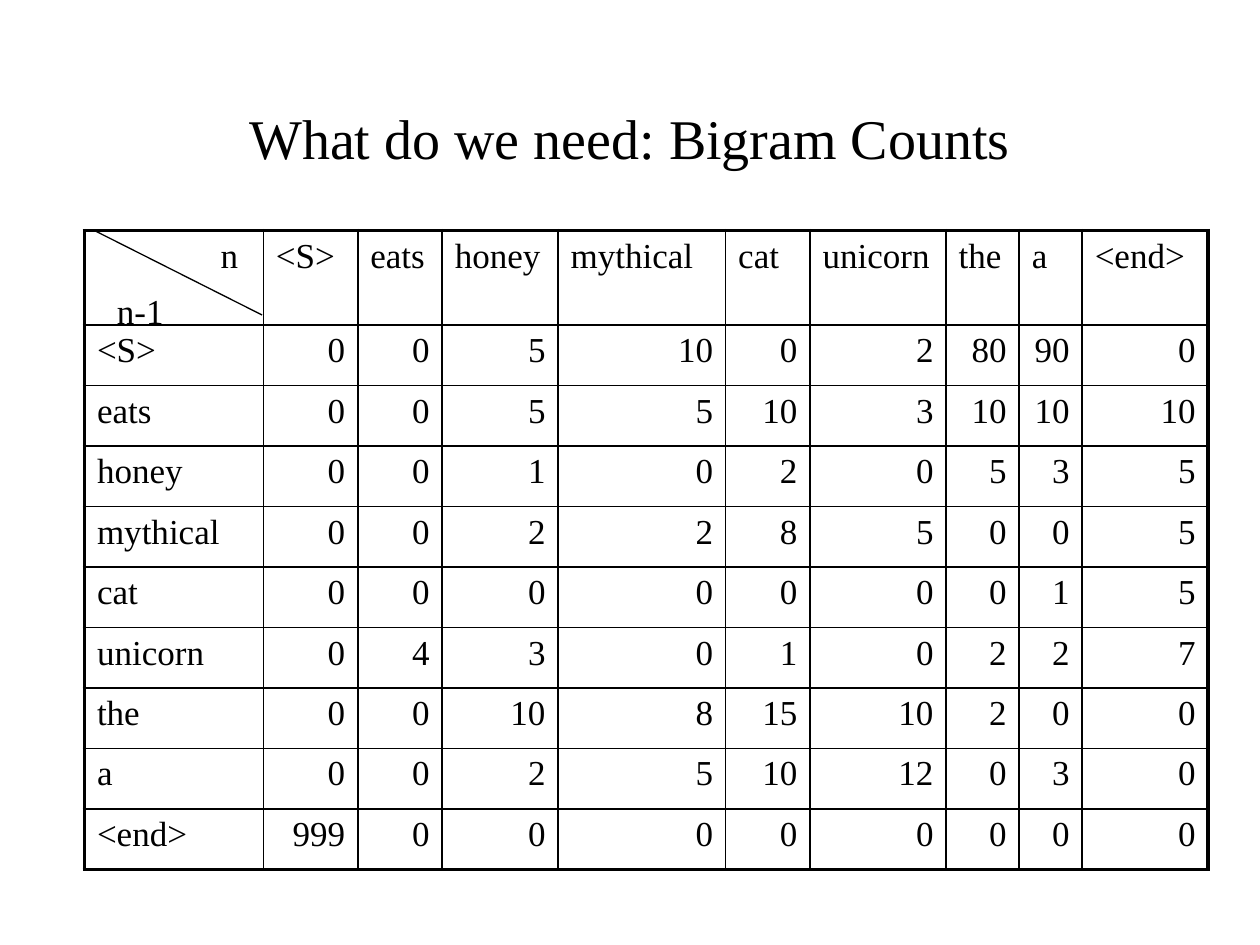
from dataclasses import dataclass

from lxml import etree
from pptx import Presentation
from pptx.dml.color import RGBColor
from pptx.enum.shapes import MSO_CONNECTOR
from pptx.enum.text import MSO_ANCHOR, MSO_AUTO_SIZE, PP_ALIGN
from pptx.oxml.ns import qn
from pptx.util import Inches, Pt

LEFT, CENTER, RIGHT = PP_ALIGN.LEFT, PP_ALIGN.CENTER, PP_ALIGN.RIGHT
TOP, MIDDLE = MSO_ANCHOR.TOP, MSO_ANCHOR.MIDDLE
GROW = MSO_AUTO_SIZE.SHAPE_TO_FIT_TEXT
STRAIGHT = MSO_CONNECTOR.STRAIGHT

WORDS = ["<S>", "eats", "honey", "mythical", "cat", "unicorn", "the", "a", "<end>"]
COUNTS = [
    [0, 0, 5, 10, 0, 2, 80, 90, 0],
    [0, 0, 5, 5, 10, 3, 10, 10, 10],
    [0, 0, 1, 0, 2, 0, 5, 3, 5],
    [0, 0, 2, 2, 8, 5, 0, 0, 5],
    [0, 0, 0, 0, 0, 0, 0, 1, 5],
    [0, 4, 3, 0, 1, 0, 2, 2, 7],
    [0, 0, 10, 8, 15, 10, 2, 0, 0],
    [0, 0, 2, 5, 10, 12, 0, 3, 0],
    [999, 0, 0, 0, 0, 0, 0, 0, 0],
]
WIDTHS = [1.42, 0.75, 0.67, 0.92, 1.33, 0.67, 1.08, 0.58, 0.5, 1]
HEAD, ROW = 0.75, 0.48


@dataclass
class Theme:
    font: str = "Times New Roman"
    ink: str = "000000"
    title: float = 32
    body: float = 20
    outer: float = 2.25
    inner: float = 1
    thin: float = 0.75


def write(frame, text, *, theme, size, align=LEFT):
    para = frame.paragraphs[0]
    para.alignment = align
    run = para.add_run()
    run.text = text
    run.font.name = theme.font
    run.font.size = Pt(size)
    run.font.color.rgb = RGBColor.from_string(theme.ink)


def border(cell, side, width, color):
    """Draw one cell edge; side is L, R, T or B."""
    line = etree.SubElement(cell._tc.get_or_add_tcPr(), qn(f"a:ln{side}"), w=str(Pt(width)))
    fill = etree.SubElement(line, qn("a:solidFill"))
    etree.SubElement(fill, qn("a:srgbClr"), val=color)


def place(shape, box):
    shape.left, shape.top, shape.width, shape.height = map(Inches, box)


class Page:
    def __init__(self, slide, theme):
        self.slide = slide
        self.theme = theme

    def title(self, text, box):
        shape = self.slide.shapes.title
        place(shape, box)
        shape.text_frame.vertical_anchor = MIDDLE
        write(shape.text_frame, text, theme=self.theme, size=self.theme.title, align=CENTER)

    def table(self, rows, left, top, widths, heights):
        """Draw a ruled table with a heavy frame and its numbers set right."""
        box = map(Inches, (left, top, sum(widths), sum(heights)))
        table = self.slide.shapes.add_table(len(heights), len(widths), *box).table
        table.first_row = table.horz_banding = False
        for col, width in zip(table.columns, widths):
            col.width = Inches(width)
        for row, height in zip(table.rows, heights):
            row.height = Inches(height)
        theme = self.theme
        for r, row in enumerate(rows):
            for c, value in enumerate(row):
                cell = table.cell(r, c)
                cell.vertical_anchor = TOP
                align = RIGHT if isinstance(value, int) else LEFT
                write(cell.text_frame, str(value), theme=theme, size=theme.body, align=align)
                edges = {"L": c == 0, "R": c == len(widths) - 1,
                         "T": r == 0, "B": r == len(heights) - 1}
                for side, heavy in edges.items():
                    border(cell, side, theme.outer if heavy else theme.inner, theme.ink)
                cell.fill.background()
        return table

    def line(self, start, end):
        line = self.slide.shapes.add_connector(STRAIGHT, *map(Inches, start + end))
        line.line.color.rgb = RGBColor.from_string(self.theme.ink)
        line.line.width = Pt(self.theme.thin)
        etree.SubElement(line._element.spPr, qn("a:effectLst"))

    def label(self, text, box):
        frame = self.slide.shapes.add_textbox(*map(Inches, box)).text_frame
        frame.word_wrap = True
        frame.auto_size = GROW
        write(frame, text, theme=self.theme, size=self.theme.body)


def main():
    deck = Presentation()
    deck.slide_width, deck.slide_height = Inches(10), Inches(7.5)
    page = Page(deck.slides.add_slide(deck.slide_layouts[5]), Theme())
    page.title("What do we need: Bigram Counts", (0.75, 0.67, 8.5, 0.83))

    rows = [["n"] + WORDS] + [[word] + line for word, line in zip(WORDS, COUNTS)]
    table = page.table(rows, 0.67, 1.83, WIDTHS, [HEAD] + [ROW] * len(WORDS))
    corner = table.cell(0, 0)
    corner.margin_right = Inches(0.2)
    corner.text_frame.paragraphs[0].alignment = RIGHT

    page.line((0.75, 1.83), (2.08, 2.5))
    page.label("n-1", (0.83, 2.25, 0.83, 0.43))
    deck.save("out.pptx")


if __name__ == "__main__":
    main()
